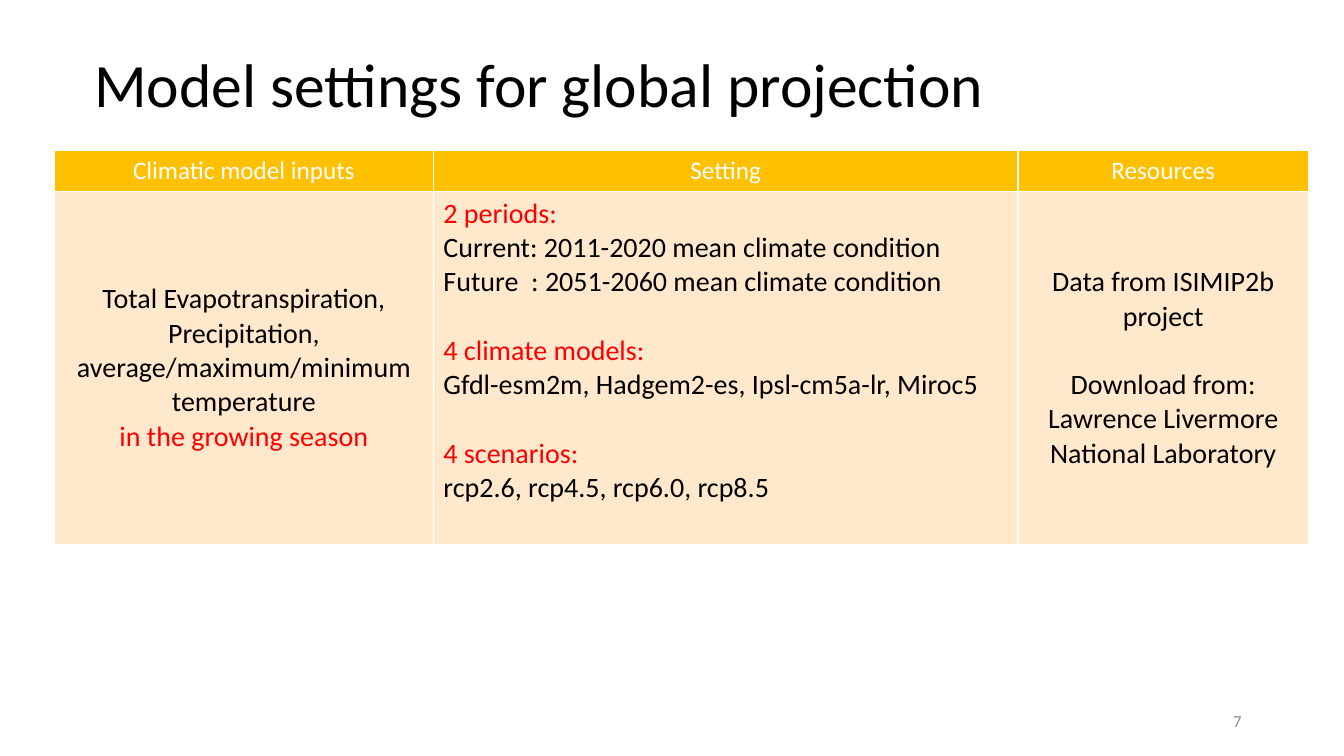
from dataclasses import dataclass

from lxml import etree
from pptx import Presentation
from pptx.dml.color import RGBColor
from pptx.enum import text
from pptx.oxml import ns
from pptx.util import Pt

FONT = "Calibri"
BLACK, WHITE, RED, GREY = "000000", "FFFFFF", "FF0000", "8C8C8C"
AMBER, CREAM = "FFC000", "FFE8CC"
LEFT, CENTER, RIGHT = text.PP_ALIGN.LEFT, text.PP_ALIGN.CENTER, text.PP_ALIGN.RIGHT
MIDDLE, TOP = text.MSO_ANCHOR.MIDDLE, text.MSO_ANCHOR.TOP
HEADER_HEIGHT, BODY_HEIGHT = 29.5, 252
GROUP_GAP = 24.4


@dataclass
class Line:
    text: str
    color: str = BLACK
    gap: float = 0


@dataclass
class Column:
    heading: str
    width: float
    lines: list[Line]
    align: text.PP_ALIGN = CENTER
    bottom: float = 3.6


COLUMNS = [
    Column("Climatic model inputs", 270.7, [
        Line("Total Evapotranspiration,"),
        Line("Precipitation,"),
        Line("average/maximum/minimum temperature"),
        Line("in the growing season", RED),
    ]),
    Column("Setting", 417.6, [
        Line("2 periods:", RED),
        Line("Current: 2011-2020 mean climate condition"),
        Line("Future  : 2051-2060 mean climate condition"),
        Line("4 climate models:", RED, GROUP_GAP),
        Line("Gfdl-esm2m, Hadgem2-es, Ipsl-cm5a-lr, Miroc5"),
        Line("4 scenarios:", RED, GROUP_GAP),
        Line("rcp2.6, rcp4.5, rcp6.0, rcp8.5"),
    ], LEFT, bottom=28),
    Column("Resources", 207.4, [
        Line("Data from ISIMIP2b project"),
        Line("Download from: Lawrence Livermore National Laboratory", gap=GROUP_GAP),
    ]),
]


def rgb(value: str) -> RGBColor:
    return RGBColor.from_string(value)


def write(p, content: str, *, size: float, color: str = BLACK, align=LEFT, gap: float = 0) -> None:
    p.alignment = align
    p.space_before = Pt(gap)
    r = p.add_run()
    r.text = content
    r.font.name, r.font.size, r.font.bold = FONT, Pt(size), False
    r.font.color.rgb = rgb(color)


def add_borders(cell, color: str, width: float) -> None:
    tc_pr = cell._tc.get_or_add_tcPr()
    for i, side in enumerate("LRTB"):
        ln = etree.Element(ns.qn(f"a:ln{side}"), w=str(Pt(width)))
        fill = etree.SubElement(ln, ns.qn("a:solidFill"))
        etree.SubElement(fill, ns.qn("a:srgbClr"), val=color)
        tc_pr.insert(i, ln)


def fill_cell(cell, lines: list[Line], *, size: float, fill: str, align=CENTER,
              anchor=MIDDLE, bottom: float = 3.6) -> None:
    cell.fill.solid()
    cell.fill.fore_color.rgb = rgb(fill)
    add_borders(cell, WHITE, 1)
    cell.vertical_anchor = anchor
    cell.margin_bottom = Pt(bottom)
    tf = cell.text_frame
    for i, line in enumerate(lines):
        p = tf.add_paragraph() if i else tf.paragraphs[0]
        write(p, line.text, size=size, color=line.color, align=align, gap=line.gap)


def add_title(s, content: str) -> None:
    title = s.shapes.title
    title.left, title.top, title.width, title.height = Pt(60), Pt(29.5), Pt(828), Pt(65.5)
    tf = title.text_frame
    tf.auto_size = text.MSO_AUTO_SIZE.NONE
    tf.vertical_anchor = MIDDLE
    p = tf.paragraphs[0]
    p.line_spacing = 0.9
    write(p, content, size=44)


def add_settings_table(s) -> None:
    width = sum(column.width for column in COLUMNS)
    table = s.shapes.add_table(2, len(COLUMNS), Pt(38.9), Pt(107.3), Pt(width),
                               Pt(HEADER_HEIGHT + BODY_HEIGHT)).table
    table.rows[0].height, table.rows[1].height = Pt(HEADER_HEIGHT), Pt(BODY_HEIGHT)
    for i, column in enumerate(COLUMNS):
        table.columns[i].width = Pt(column.width)
        fill_cell(table.cell(0, i), [Line(column.heading, WHITE)], size=18, fill=AMBER, anchor=TOP)
        fill_cell(table.cell(1, i), column.lines, size=20, fill=CREAM,
                  align=column.align, bottom=column.bottom)


def add_page_number(s, number: int) -> None:
    tf = s.shapes.add_textbox(Pt(678), Pt(500.5), Pt(216), Pt(28.8)).text_frame
    tf.word_wrap = True
    tf.vertical_anchor = MIDDLE
    write(tf.paragraphs[0], str(number), size=12, color=GREY, align=RIGHT)


def main() -> None:
    prs = Presentation()
    prs.slide_width, prs.slide_height = Pt(960), Pt(540)
    s = prs.slides.add_slide(prs.slide_layouts.get_by_name("Title Only"))
    add_title(s, "Model settings for global projection")
    add_settings_table(s)
    add_page_number(s, 7)
    prs.save("out.pptx")


if __name__ == "__main__":
    main()
